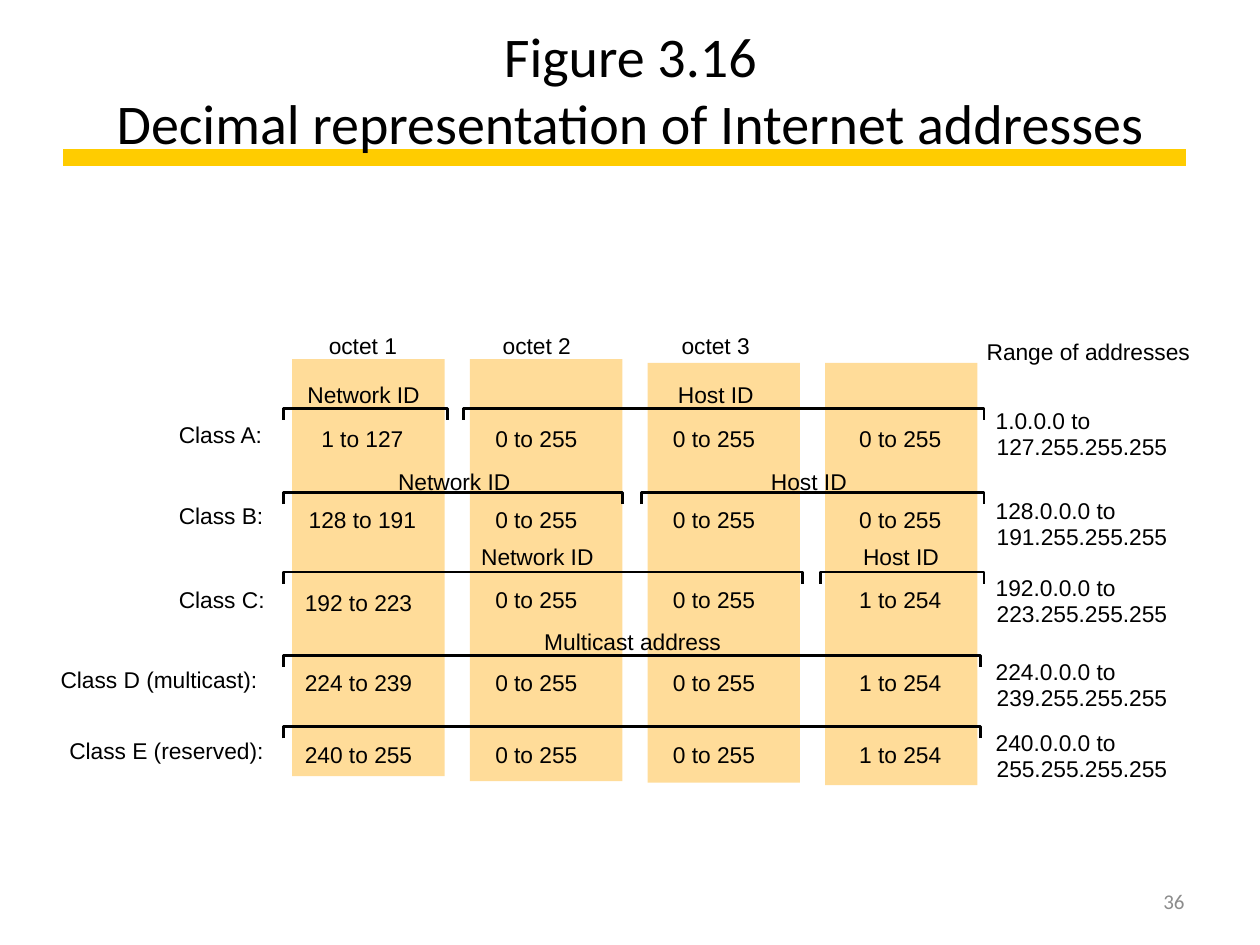
from dataclasses import dataclass

from lxml import etree
from pptx import Presentation
from pptx.dml.color import RGBColor
from pptx.enum.shapes import MSO_CONNECTOR, MSO_SHAPE
from pptx.enum.text import MSO_ANCHOR, MSO_AUTO_SIZE, PP_ALIGN
from pptx.oxml.ns import qn
from pptx.util import Pt

STRAIGHT = MSO_CONNECTOR.STRAIGHT
RECTANGLE = MSO_SHAPE.RECTANGLE
MIDDLE = MSO_ANCHOR.MIDDLE
NO_FIT = MSO_AUTO_SIZE.NONE
CENTER, LEFT, RIGHT = PP_ALIGN.CENTER, PP_ALIGN.LEFT, PP_ALIGN.RIGHT


@dataclass(frozen=True)
class Theme:
    """Colours, fonts and sizes of the slide."""
    ink: RGBColor = RGBColor.from_string("000000")
    rule: RGBColor = RGBColor.from_string("FFCC00")
    band: RGBColor = RGBColor.from_string("FFDC99")
    muted: RGBColor = RGBColor.from_string("8C8C8C")
    heading_font: str = "Calibri"
    label_font: str = "Arial"
    title_size: int = 32
    label_size: int = 13
    number_size: int = 12
    rule_width: int = 10
    bracket_width: float = 1.63


THEME = Theme()
TITLE = "Figure 3.16\vDecimal representation of Internet addresses"
BAND_LEFT, BAND_PITCH, BAND_WIDTH = 167, 101.5, 87.1
BANDS = [(205.2, 238.3), (205.2, 241.2), (207.4, 239.8), (207.4, 241.2)]
OCTET_LEFTS = [187.9, 287.3, 389.5]
VALUE_LEFTS = [283, 384.5, 491]
VALUE_WIDTH, LABEL_HEIGHT = 49, 15
RANGE_LEFT, RANGE_STEP, RANGE_WIDTH = 569, 14.9, 101
BRACKET_DROP = 6.6

CLASS_LABELS = [
    ("Class A:", 102.2, 240.5, 50),
    ("Class B:", 102.2, 286.6, 50),
    ("Class C:", 102.2, 334.8, 51),
    ("Class D (multicast):", 34.6, 380.2, 116),
    ("Class E (reserved):", 39.6, 421.2, 114),
]
FIRST_OCTETS = [
    ("1 to 127", 183.6, 242.6, 49),
    ("128 to 191", 176.4, 288.7, 64),
    ("192 to 223", 174.2, 336.2, 68),
    ("224 to 239", 174.2, 382.3, 68),
    ("240 to 255", 174.2, 423.4, 68),
]
LAST_OCTETS = [
    (242.6, "0 to 255"),
    (288.7, "0 to 255"),
    (334.8, "1 to 254"),
    (382.3, "1 to 254"),
    (423.4, "1 to 254"),
]
RANGES = [
    (232.6, "1.0.0.0 to", "127.255.255.255"),
    (283.7, "128.0.0.0 to", "191.255.255.255"),
    (327.6, "192.0.0.0 to", "223.255.255.255"),
    (375.8, "224.0.0.0 to", "239.255.255.255"),
    (416.2, "240.0.0.0 to", "255.255.255.255"),
]
PART_NAMES = [
    ("Network ID", 175.7, 217.4, 67),
    ("Host ID", 387.4, 217.4, 45.4),
    ("Network ID", 227.5, 267.1, 67),
    ("Host ID", 440.6, 267.1, 45.4),
    ("Network ID", 275, 310.3, 67),
    ("Host ID", 493.2, 310.3, 45.4),
    ("Multicast address", 311, 358.6, 104.4),
]
BRACKETS = [
    (233.3, 162, 210.2, 255.6),
    (233.3, 265, 405.4, 562.3),
    (281.5, 162, 261.7, 355.7),
    (281.5, 366.5, 468.7, 562.3),
    (326.9, 162, 314.3, 458.6),
    (326.9, 468.7, 517.7, 562.3),
    (374.4, 162, 366.8, 560.2),
    (415.4, 162, 366.8, 560.2),
]


def style_text(frame, font, size, color, align):
    """Format every run and paragraph of a text frame."""
    for para in frame.paragraphs:
        para.alignment = align
        for span in para.runs:
            span.font.name = font
            span.font.size = Pt(size)
            span.font.color.rgb = color


def place(shape, left, top, width, height):
    """Set the position and size of a shape."""
    shape.left, shape.top = Pt(left), Pt(top)
    shape.width, shape.height = Pt(width), Pt(height)


def add_title(page):
    """Fill and place the title placeholder."""
    title = page.shapes.title
    place(title, 36, 21.6, 648, 58.3)
    frame = title.text_frame
    frame.text = TITLE
    frame.auto_size = NO_FIT
    frame.vertical_anchor = MIDDLE
    frame.margin_left, frame.margin_right = Pt(10), Pt(9.4)
    style_text(frame, THEME.heading_font, THEME.title_size, THEME.ink, CENTER)


def add_rule(page):
    """Draw the thick rule behind the title."""
    rule = page.shapes.add_connector(STRAIGHT, Pt(36), Pt(90), Pt(677.5), Pt(90))
    rule.line.color.rgb = THEME.rule
    rule.line.width = Pt(THEME.rule_width)
    etree.SubElement(rule.element.spPr, qn("a:effectLst"))
    page.shapes.title.element.addprevious(rule.element)


def add_band(page, left, top, height):
    """Draw the shaded column of one octet."""
    band = page.shapes.add_shape(
        RECTANGLE, Pt(left), Pt(top), Pt(BAND_WIDTH), Pt(height))
    band.shadow.inherit = False
    band.fill.solid()
    band.fill.fore_color.rgb = THEME.band
    band.line.fill.background()


def add_label(page, text, left, top, width):
    """Write one line of diagram text without insets."""
    box = page.shapes.add_textbox(Pt(left), Pt(top), Pt(width), Pt(LABEL_HEIGHT))
    frame = box.text_frame
    frame.text = text
    frame.word_wrap = False
    frame.margin_left = frame.margin_right = 0
    frame.margin_top = frame.margin_bottom = 0
    style_text(frame, THEME.label_font, THEME.label_size, THEME.ink, LEFT)


def add_bracket(page, top, left, middle, right):
    """Draw a bracket as two hooks that meet in the middle."""
    for end in (left, right):
        builder = page.shapes.build_freeform(Pt(end), Pt(top + BRACKET_DROP))
        corners = [(Pt(end), Pt(top)), (Pt(middle), Pt(top))]
        builder.add_line_segments(corners, close=False)
        hook = builder.convert_to_shape()
        hook.shadow.inherit = False
        hook.fill.background()
        hook.line.color.rgb = THEME.ink
        hook.line.width = Pt(THEME.bracket_width)


def add_page_number(page):
    """Write the page number at the lower right."""
    box = page.shapes.add_textbox(Pt(516), Pt(500.4), Pt(168), Pt(28.8))
    frame = box.text_frame
    frame.text = "36"
    frame.word_wrap = True
    frame.vertical_anchor = MIDDLE
    style_text(frame, THEME.heading_font, THEME.number_size, THEME.muted, RIGHT)


def main():
    """Build the slide and save the deck."""
    deck = Presentation()
    deck.slide_width, deck.slide_height = Pt(720), Pt(540)
    page = deck.slides.add_slide(deck.slide_layouts.get_by_name("Title Only"))
    add_title(page)
    add_rule(page)
    for column, (top, height) in enumerate(BANDS):
        add_band(page, BAND_LEFT + column * BAND_PITCH, top, height)
    for number, left in enumerate(OCTET_LEFTS, start=1):
        add_label(page, f"octet {number}", left, 189.4, 41)
    for label in CLASS_LABELS + FIRST_OCTETS + PART_NAMES:
        add_label(page, *label)
    for top, last in LAST_OCTETS:
        for left, text in zip(VALUE_LEFTS, ("0 to 255", "0 to 255", last)):
            add_label(page, text, left, top, VALUE_WIDTH)
    for bracket in BRACKETS:
        add_bracket(page, *bracket)
    add_label(page, "Range of addresses", 563.8, 193, 120.2)
    for top, start, end in RANGES:
        add_label(page, start, RANGE_LEFT, top, 75)
        add_label(page, end, RANGE_LEFT + 0.5, top + RANGE_STEP, RANGE_WIDTH)
    add_page_number(page)
    deck.save("out.pptx")


if __name__ == "__main__":
    main()
